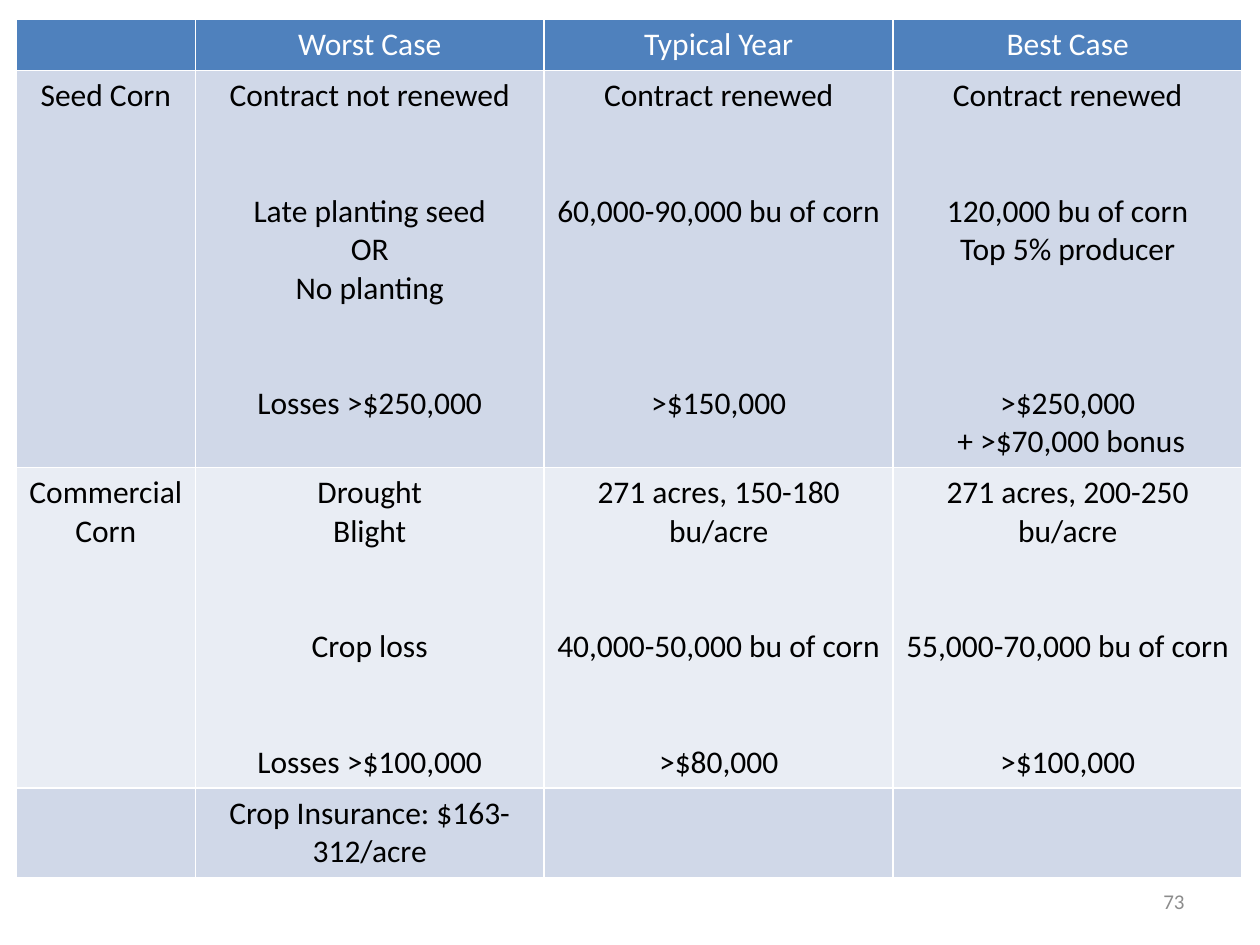
from pptx import Presentation
from pptx.dml.color import RGBColor
from pptx.enum import text
from pptx.util import Inches, Pt

COLORS = {"header": "4F81BD", "band": "D0D8E8", "light": "E9EDF4",
          "white": "FFFFFF", "black": "000000", "number": "8C8C8C"}
FONT = "Calibri"
LINE = 21.97  # points per line of 18 pt text

# Each cell lists its paragraphs as (empty lines above, wording).
ROWS = [
    {"height": 0.41, "fill": "header", "color": "white", "cells": [
        [], [(0, "Worst Case")], [(0, "Typical Year")], [(0, "Best Case")]]},
    {"height": 3.15, "fill": "band", "color": "black", "cells": [
        [(0, "Seed Corn")],
        [(0, "Contract not renewed"), (2, "Late planting seed"), (0, "OR"),
         (0, "No planting"), (2, "Losses >$250,000")],
        [(0, "Contract renewed"), (2, "60,000-90,000 bu of corn"),
         (4, ">$150,000")],
        [(0, "Contract renewed"), (2, "120,000 bu of corn"),
         (0, "Top 5% producer"), (3, ">$250,000"), (0, " + >$70,000 bonus")]]},
    {"height": 2.54, "fill": "light", "color": "black", "cells": [
        [(0, "Commercial Corn")],
        [(0, "Drought"), (0, "Blight"), (2, "Crop loss"),
         (2, "Losses >$100,000")],
        [(0, "271 acres, 150-180 bu/acre"), (2, "40,000-50,000 bu of corn"),
         (2, ">$80,000")],
        [(0, "271 acres, 200-250 bu/acre"), (2, "55,000-70,000 bu of corn"),
         (2, ">$100,000")]]},
    {"height": 0.71, "fill": "band", "color": "black", "cells": [
        [], [(0, "Crop Insurance: $163-312/acre")], [], []]},
]
WIDTHS = [1.42, 2.77, 2.77, 2.77]
PAGE_NUMBER = "73"


def write(para, wording, size, color, align):
    para.alignment = align
    span = para.add_run()
    span.text = wording
    for name, value in {"name": FONT, "size": Pt(size), "bold": False}.items():
        setattr(span.font, name, value)
    span.font.color.rgb = RGBColor.from_string(COLORS[color])


def fill_cell(cell, paragraphs, fill, color):
    cell.fill.solid()
    cell.fill.fore_color.rgb = RGBColor.from_string(COLORS[fill])
    frame = cell.text_frame
    for index, (gap, wording) in enumerate(paragraphs):
        para = frame.add_paragraph() if index else frame.paragraphs[0]
        if gap:
            para.space_before = Pt(gap * LINE)
        write(para, wording, 18, color, text.PP_ALIGN.CENTER)


def add_scenario_table(page):
    height = sum(row["height"] for row in ROWS)
    table = page.shapes.add_table(
        len(ROWS), len(WIDTHS), Inches(0.13), Inches(0.15),
        Inches(sum(WIDTHS)), Inches(height)).table
    for column, width in zip(table.columns, WIDTHS):
        column.width = Inches(width)
    for table_row, row in zip(table.rows, ROWS):
        table_row.height = Inches(row["height"])
        for cell, paragraphs in zip(table_row.cells, row["cells"]):
            fill_cell(cell, paragraphs, row["fill"], row["color"])


def add_page_number(page):
    box = page.shapes.add_textbox(
        Inches(7.17), Inches(6.95), Inches(2.33), Inches(0.4))
    frame = box.text_frame
    frame.word_wrap = True
    frame.vertical_anchor = text.MSO_ANCHOR.MIDDLE
    write(frame.paragraphs[0], PAGE_NUMBER, 12, "number", text.PP_ALIGN.RIGHT)


def main():
    deck = Presentation()
    deck.slide_width, deck.slide_height = Inches(10), Inches(7.5)
    page = deck.slides.add_slide(deck.slide_layouts.get_by_name("Blank"))
    add_scenario_table(page)
    add_page_number(page)
    deck.save("out.pptx")


if __name__ == "__main__":
    main()
